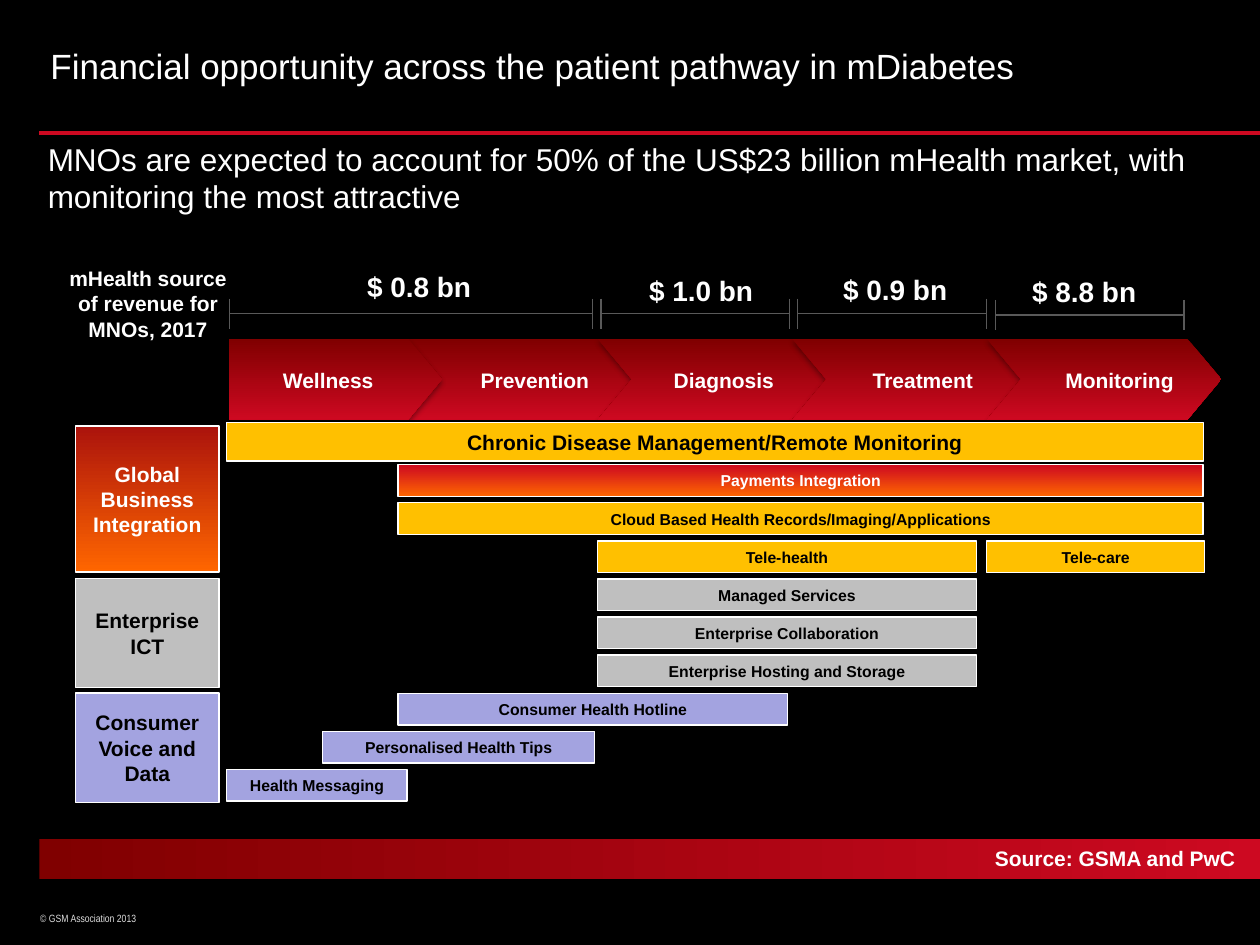
"""Build the mDiabetes financial opportunity slide."""
from typing import NamedTuple

from lxml.etree import SubElement
from pptx import Presentation
from pptx.dml.color import RGBColor
from pptx.enum.shapes import MSO_CONNECTOR as CONN, MSO_SHAPE as SHAPE
from pptx.enum.text import MSO_ANCHOR as ANCHOR, PP_ALIGN as ALIGN
from pptx.oxml.ns import qn
from pptx.util import Pt

COLORS = {
    "black": "000000", "white": "FFFFFF", "red": "CD0921", "maroon": "800000",
    "brick": "AB130C", "orange": "FF6600", "gold": "FFC000", "grey": "BFBFBF",
    "lilac": "A3A3E0", "bracket": "595959", "copyright": "DDDDDD",
}
ROW_TOP, ROW_PITCH, ROW_H = 265.6, 21.75, 18.2
STAGE_TOP, STAGE_H, STAGE_PITCH = 193.7, 46.1, 111.2


class Box(NamedTuple):
    x: float
    y: float
    w: float
    h: float


class Bar(NamedTuple):
    text: str
    row: int
    x: float
    w: float
    fill: str | tuple


class Category(NamedTuple):
    text: str
    y: float
    h: float
    fill: str | tuple
    color: str


class Revenue(NamedTuple):
    text: str
    label_x: float
    label_y: float
    start: float
    end: float
    line_y: float


class Stage(NamedTuple):
    text: str
    label_x: float


BARS = [
    Bar("Payments Integration", 0, 227.5, 460, ("red", "orange", 90)),
    Bar("Cloud Based Health Records/Imaging/Applications", 1, 227.5, 460, "gold"),
    Bar("Tele-health", 2, 341.3, 216.7, "gold"),
    Bar("Managed Services", 3, 341.3, 216.7, "grey"),
    Bar("Enterprise Collaboration", 4, 341.3, 216.7, "grey"),
    Bar("Enterprise Hosting and Storage", 5, 341.3, 216.7, "grey"),
    Bar("Consumer Health Hotline", 6, 227.5, 222.5, "lilac"),
    Bar("Personalised Health Tips", 7, 184.3, 155.5, "lilac"),
    Bar("Health Messaging", 8, 129.6, 103, "lilac"),
    Bar("Tele-care", 2, 563.8, 124.6, "gold"),
]
CATEGORIES = [
    Category("Global Business Integration", 243.4, 83.5, ("brick", "orange", 90), "white"),
    Category("Enterprise ICT", 330.5, 62.6, "grey", "black"),
    Category("Consumer Voice and Data", 396, 62.6, "lilac", "black"),
]
REVENUES = [
    Revenue("$ 0.8 bn", 185.8, 150.6, 131, 338.4, 179.3),
    Revenue("$ 1.0 bn", 347, 152.7, 343.4, 451, 179.3),
    Revenue("$ 0.9 bn", 457.9, 152, 455.8, 563.8, 179.3),
    Revenue("$ 8.8 bn", 565.9, 153.4, 568.8, 676.6, 180),
]
STAGES = [
    Stage("Wellness", 129.6), Stage("Prevention", 247.7), Stage("Diagnosis", 355.7),
    Stage("Treatment", 469.4), Stage("Monitoring", 581.8),
]


def rgb(name: str) -> RGBColor:
    return RGBColor.from_string(COLORS[name])


def write(sp, text: str, *, size: float = 12, color: str = "white", bold: bool = True,
          align=ALIGN.CENTER, anchor=ANCHOR.TOP, font: str = "Arial", left: float = 7.2) -> None:
    tf = sp.text_frame
    tf.word_wrap = True
    tf.vertical_anchor = anchor
    tf.margin_left, tf.margin_right = Pt(left), Pt(7.2)
    tf.margin_top = tf.margin_bottom = Pt(3.6)
    p = tf.paragraphs[0]
    p.alignment = align
    r = p.add_run()
    r.text = text
    r.font.name, r.font.size, r.font.bold = font, Pt(size), bold
    r.font.color.rgb = rgb(color)


def add_text(s, text: str, box: Box, **fmt) -> None:
    write(s.shapes.add_textbox(*map(Pt, box)), text, **fmt)


def paint(sp, fill: str | tuple) -> None:
    if isinstance(fill, str):
        sp.fill.solid()
        sp.fill.fore_color.rgb = rgb(fill)
        return
    start, end, angle = fill
    sp.fill.gradient()
    sp.fill.gradient_angle = -angle % 360
    for stop, name in zip(sp.fill.gradient_stops, (start, end)):
        stop.color.rgb = rgb(name)


def add_shape(s, kind, box: Box, fill: str | tuple, outlined: bool = True):
    sp = s.shapes.add_shape(kind, *map(Pt, box))
    paint(sp, fill)
    if outlined:
        sp.line.color.rgb = rgb("white")
        sp.line.width = Pt(0.75)
    else:
        sp.line.fill.background()
    sp.shadow.inherit = False
    return sp


def add_shadow(sp) -> None:
    effects = sp._element.spPr.find(qn("a:effectLst"))
    outer = SubElement(effects, qn("a:outerShdw"), blurRad=str(Pt(3.1)),
                       dist=str(Pt(1.8)), dir="5400000", rotWithShape="0")
    color = SubElement(outer, qn("a:srgbClr"), val=COLORS["black"])
    SubElement(color, qn("a:alpha"), val="35000")


def add_line(s, x1: float, y1: float, x2: float, y2: float, color: str, width: float) -> None:
    line = s.shapes.add_connector(CONN.STRAIGHT, *map(Pt, (x1, y1, x2, y2)))
    line.line.color.rgb = rgb(color)
    line.line.width = Pt(width)
    SubElement(line._element.spPr, qn("a:effectLst"))


def add_stages(s) -> None:
    chevrons = [(SHAPE.CHEVRON, 230.4 + i * STAGE_PITCH, 133.9) for i in range(4)]
    chevrons.insert(1, (SHAPE.PENTAGON, 131, 121.7))
    for kind, x, w in chevrons:
        sp = add_shape(s, kind, Box(x, STAGE_TOP, w, STAGE_H), ("maroon", "red", 90), False)
        sp.adjustments[0] = 0.42
        add_shadow(sp)
    for stage in STAGES:
        add_text(s, stage.text, Box(stage.label_x, 206.6, 115.9, 21.6))


def add_revenue(s, rev: Revenue) -> None:
    add_text(s, rev.text, Box(rev.label_x, rev.label_y, 107.3, 33.8), size=16)
    add_line(s, rev.start, rev.line_y, rev.end, rev.line_y, "bracket", 0.75)
    for x in (rev.start, rev.end):
        add_line(s, x, rev.line_y - 8.6, x, rev.line_y + 8.6, "bracket", 0.75)


def main() -> None:
    prs = Presentation()
    prs.slide_width, prs.slide_height = Pt(720), Pt(540)
    s = prs.slides.add_slide(prs.slide_layouts[5])
    s.background.fill.solid()
    s.background.fill.fore_color.rgb = rgb("black")

    title = s.shapes.title
    title.left, title.top, title.width, title.height = map(Pt, (21.6, 20.2, 648, 34.6))
    write(title, "Financial opportunity across the patient pathway in mDiabetes",
          size=20, bold=False, align=ALIGN.LEFT, anchor=ANCHOR.MIDDLE)
    add_text(s, "© GSM Association 2013", Box(22.3, 517.7, 112.3, 14.4), size=6, bold=False,
             color="copyright", font="Arial Narrow", align=ALIGN.LEFT, left=0.7)
    add_line(s, 22.5, 75.8, 720, 75.8, "red", 2.25)
    add_shape(s, SHAPE.RECTANGLE, Box(22.5, 479.5, 697.5, 23), ("maroon", "red", 0), False)
    add_text(s, "MNOs are expected to account for 50% of the US$23 billion mHealth market, "
             "with monitoring the most attractive", Box(20.2, 76.3, 689.8, 54.7),
             size=18, bold=False, align=ALIGN.LEFT)

    add_stages(s)
    sp = add_shape(s, SHAPE.RECTANGLE, Box(129.6, 241.6, 558, 21.9), "gold")
    write(sp, "Chronic Disease Management/Remote Monitoring", color="black", anchor=ANCHOR.MIDDLE)
    for bar in BARS:
        box = Box(bar.x, ROW_TOP + bar.row * ROW_PITCH, bar.w, ROW_H)
        sp = add_shape(s, SHAPE.RECTANGLE, box, bar.fill)
        write(sp, bar.text, size=9, anchor=ANCHOR.MIDDLE,
              color="black" if isinstance(bar.fill, str) else "white")
    for cat in CATEGORIES:
        sp = add_shape(s, SHAPE.RECTANGLE, Box(43.2, cat.y, 82, cat.h), cat.fill)
        write(sp, cat.text, color=cat.color, anchor=ANCHOR.MIDDLE)
    for rev in REVENUES:
        add_revenue(s, rev)
    add_text(s, "mHealth source of revenue for MNOs, 2017", Box(25.9, 148.3, 117.4, 51.8))
    add_text(s, "Source: GSMA and PwC", Box(561.4, 479.9, 206.6, 14.4), align=ALIGN.LEFT)
    prs.save("out.pptx")


if __name__ == "__main__":
    main()
